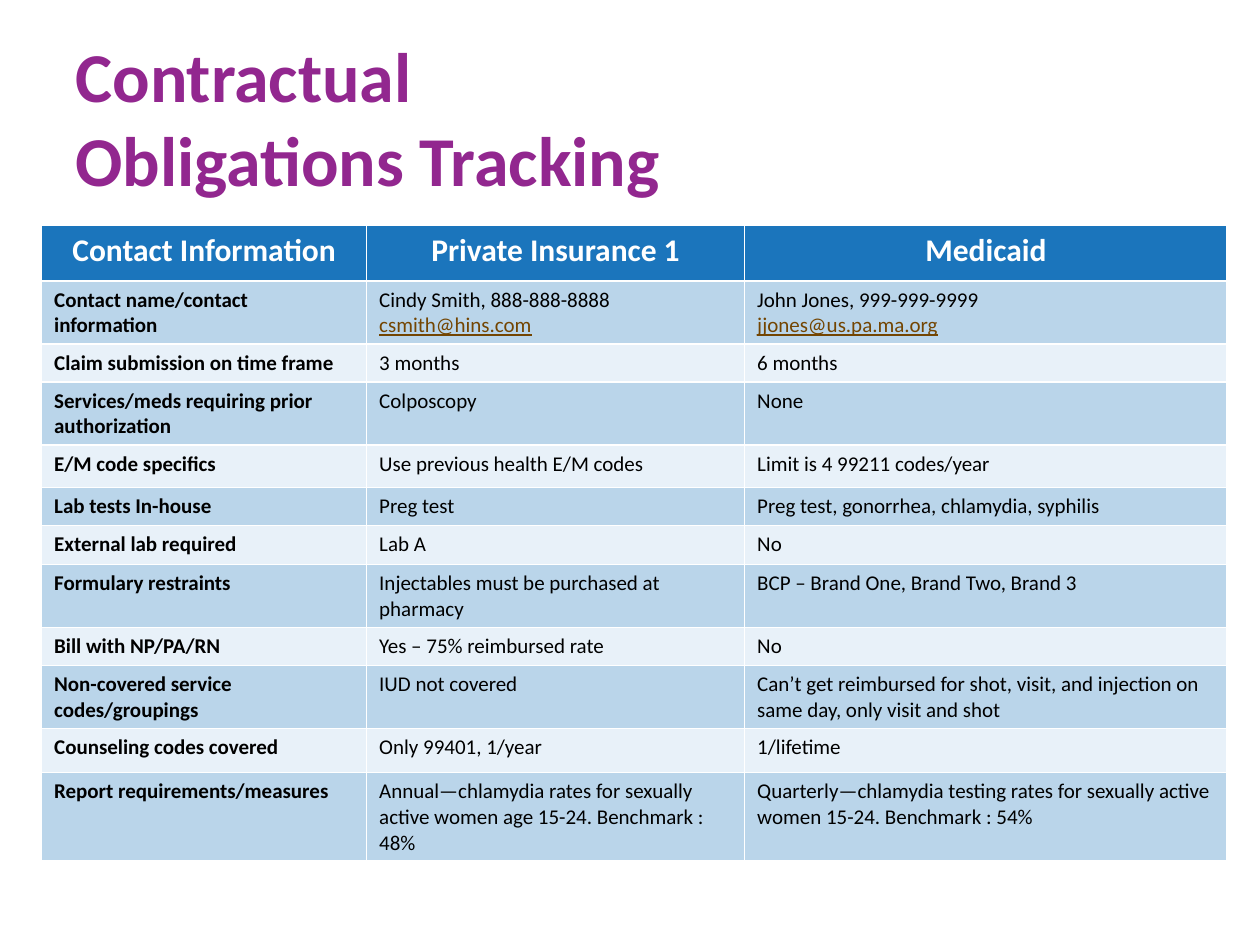
from lxml.etree import SubElement
from pptx import Presentation
from pptx.dml.color import RGBColor
from pptx.enum.text import MSO_ANCHOR, PP_ALIGN
from pptx.oxml.ns import qn
from pptx.util import Inches, Pt

PURPLE = RGBColor(0x92, 0x27, 0x8F)
BLUE = RGBColor(0x1B, 0x75, 0xBC)
PALE_BLUE = RGBColor(0xE8, 0xF1, 0xF9)
BROWN = RGBColor(0x73, 0x45, 0x02)
WHITE = RGBColor(0xFF, 0xFF, 0xFF)
BLACK = RGBColor(0, 0, 0)
FONT = "Calibri"

TITLE = "Contractual Obligations Tracking"
HEADER = ("Contact Information", "Private Insurance 1", "Medicaid")
OBLIGATIONS = [
    ("Contact name/contact information",
     "Cindy Smith, 888-888-8888\ncsmith@hins.com",
     "John Jones, 999-999-9999\njjones@us.pa.ma.org"),
    ("Claim submission on time frame", "3 months", "6 months"),
    ("Services/meds requiring prior authorization", "Colposcopy", "None"),
    ("E/M code specifics", "Use previous health E/M codes",
     "Limit is 4 99211 codes/year"),
    ("Lab tests In-house", "Preg test",
     "Preg test, gonorrhea, chlamydia, syphilis"),
    ("External lab required", "Lab A", "No"),
    ("Formulary restraints", "Injectables must be purchased at pharmacy",
     "BCP – Brand One, Brand Two, Brand 3"),
    ("Bill with NP/PA/RN", "Yes – 75% reimbursed rate", "No"),
    ("Non-covered service codes/groupings", "IUD not covered",
     "Can’t get reimbursed for shot, visit, and injection on same day, "
     "only visit and shot"),
    ("Counseling codes covered", "Only 99401, 1/year", "1/lifetime"),
    ("Report requirements/measures",
     "Annual—chlamydia rates for sexually active women age 15-24. "
     "Benchmark : 48%",
     "Quarterly—chlamydia testing rates for sexually active women 15-24. "
     "Benchmark : 54%"),
]
COLUMN_WIDTHS = (2.58, 3, 3.83)
ROW_HEIGHTS = (0.44, 0.5, 0.3, 0.5, 0.34, 0.3, 0.31, 0.5, 0.3, 0.5, 0.35, 0.7)


def style_font(paragraph, size, color, bold):
    font = paragraph.font
    font.name, font.size, font.bold = FONT, Pt(size), bold
    font.color.rgb = color


def fill_cell(cell, color, opacity=100):
    cell.fill.solid()
    cell.fill.fore_color.rgb = color
    if opacity < 100:
        color_element = cell._tc.tcPr.find(f".//{qn('a:srgbClr')}")
        SubElement(color_element, qn("a:alpha"), val=str(opacity * 1000))


def add_title(slide):
    box = slide.shapes.add_textbox(
        Inches(0.5), Inches(0.3), Inches(5.42), Inches(1.25))
    frame = box.text_frame
    frame.word_wrap = True
    frame.vertical_anchor = MSO_ANCHOR.MIDDLE
    frame.text = TITLE
    style_font(frame.paragraphs[0], 40, PURPLE, True)


def add_obligations(slide):
    rows = [HEADER] + OBLIGATIONS
    table = slide.shapes.add_table(
        len(rows), len(HEADER), Inches(0.33), Inches(1.79),
        Inches(sum(COLUMN_WIDTHS)), Inches(sum(ROW_HEIGHTS))).table
    for column, width in zip(table.columns, COLUMN_WIDTHS):
        column.width = Inches(width)
    for row, height in zip(table.rows, ROW_HEIGHTS):
        row.height = Inches(height)

    for row_index, texts in enumerate(rows):
        is_header = row_index == 0
        for column_index, text in enumerate(texts):
            cell = table.cell(row_index, column_index)
            cell.text = text
            if is_header:
                fill_cell(cell, BLUE)
            elif row_index % 2:
                fill_cell(cell, BLUE, 30)
            else:
                fill_cell(cell, PALE_BLUE)
            for paragraph in cell.text_frame.paragraphs:
                if is_header:
                    paragraph.alignment = PP_ALIGN.CENTER
                    style_font(paragraph, 18, WHITE, True)
                    continue
                style_font(paragraph, 12, BLACK, column_index == 0)
                if "@" in paragraph.text:
                    address = paragraph.runs[0].font
                    address.color.rgb = BROWN
                    address.underline = True


def main():
    presentation = Presentation()
    presentation.slide_width = Inches(10)
    presentation.slide_height = Inches(7.5)
    slide = presentation.slides.add_slide(presentation.slide_layouts[6])
    add_title(slide)
    add_obligations(slide)
    presentation.save("out.pptx")


if __name__ == "__main__":
    main()
